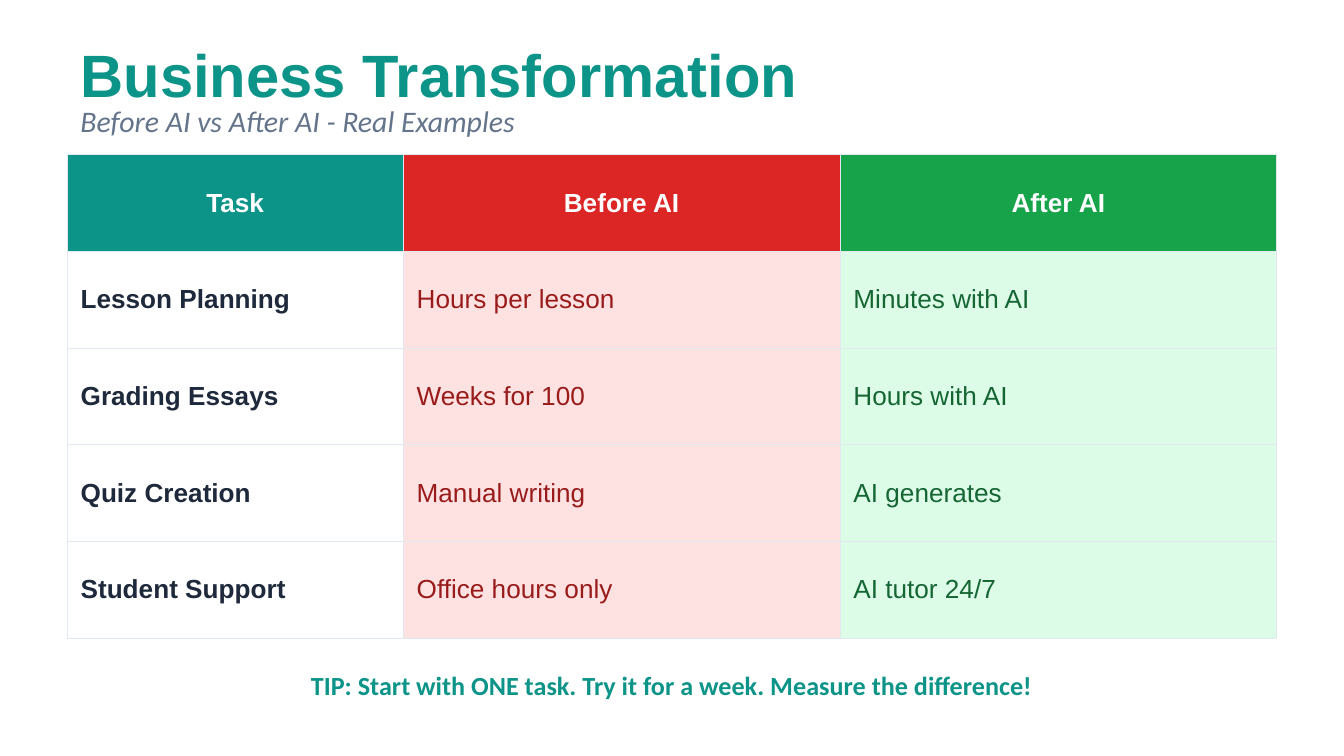
from lxml import etree
from pptx import Presentation
from pptx.dml.color import RGBColor
from pptx.enum import text
from pptx.oxml import ns
from pptx.util import Pt

COLORS = {
    "teal": "0D9488", "slate": "64748B", "ink": "1E293B", "white": "FFFFFF",
    "red": "DC2626", "dark_red": "991B1B", "pale_red": "FEE2E2",
    "green": "16A34A", "dark_green": "166534", "pale_green": "DCFCE7",
    "border": "E2E8F0",
}

HEADING = "Business Transformation"
SUBTITLE = "Before AI vs After AI - Real Examples"
TIP = "TIP: Start with ONE task. Try it for a week. Measure the difference!"
TASKS = [
    ("Task", "Before AI", "After AI"),
    ("Lesson Planning", "Hours per lesson", "Minutes with AI"),
    ("Grading Essays", "Weeks for 100", "Hours with AI"),
    ("Quiz Creation", "Manual writing", "AI generates"),
    ("Student Support", "Office hours only", "AI tutor 24/7"),
]
COLUMNS = [
    {"width": 180, "head": "teal", "body": None, "ink": "ink", "bold": True},
    {"width": 234, "head": "red", "body": "pale_red", "ink": "dark_red", "bold": False},
    {"width": 234, "head": "green", "body": "pale_green", "ink": "dark_green", "bold": False},
]

LEFT, WIDTH = 36, 648
TABLE_TOP, ROW_HEIGHT = 82.8, 51.84
BORDER_WIDTH = 0.5
LEFT_ALIGN, CENTER = text.PP_ALIGN.LEFT, text.PP_ALIGN.CENTER


def rgb(name):
    return RGBColor.from_string(COLORS[name])


def write(frame, words, color, align=LEFT_ALIGN, **font_format):
    frame.text = words
    paragraph = frame.paragraphs[0]
    paragraph.alignment = align
    font = paragraph.runs[0].font
    font.color.rgb = rgb(color)
    for key, value in font_format.items():
        setattr(font, key, value)


def place(box, top, height, words, color, **font_format):
    frame = box.text_frame
    layout = {"left": Pt(LEFT), "top": Pt(top), "width": Pt(WIDTH), "height": Pt(height)}
    for key, value in layout.items():
        setattr(box, key, value)
    frame_format = {"word_wrap": True, "auto_size": text.MSO_AUTO_SIZE.NONE,
                    "vertical_anchor": text.MSO_ANCHOR.MIDDLE}
    for key, value in frame_format.items():
        setattr(frame, key, value)
    write(frame, words, color, **font_format)


def add_borders(cell):
    properties = cell._tc.get_or_add_tcPr()
    for index, side in enumerate(("lnL", "lnR", "lnT", "lnB")):
        line = etree.Element(ns.qn(f"a:{side}"), w=str(int(Pt(BORDER_WIDTH))))
        fill = etree.SubElement(line, ns.qn("a:solidFill"))
        etree.SubElement(fill, ns.qn("a:srgbClr"), val=COLORS["border"])
        properties.insert(index, line)


def add_tasks(slide):
    table = slide.shapes.add_table(
        len(TASKS), len(COLUMNS), Pt(LEFT), Pt(TABLE_TOP),
        Pt(WIDTH), Pt(ROW_HEIGHT * len(TASKS))).table
    table.horz_banding = False
    for column, style in zip(table.columns, COLUMNS):
        column.width = Pt(style["width"])
    for r, task in enumerate(TASKS):
        table.rows[r].height = Pt(ROW_HEIGHT)
        is_head = r == 0
        for c, (words, style) in enumerate(zip(task, COLUMNS)):
            cell = table.cell(r, c)
            cell.vertical_anchor = text.MSO_ANCHOR.MIDDLE
            background = style["head" if is_head else "body"]
            if background:
                cell.fill.solid()
                cell.fill.fore_color.rgb = rgb(background)
            else:
                cell.fill.background()
            add_borders(cell)
            write(cell.text_frame, words, "white" if is_head else style["ink"],
                  CENTER if is_head else LEFT_ALIGN,
                  name="Arial", size=Pt(14), bold=is_head or style["bold"])


def main():
    deck = Presentation()
    deck.slide_width, deck.slide_height = Pt(720), Pt(405)
    slide = deck.slides.add_slide(deck.slide_layouts[5])
    slide.background.fill.solid()
    slide.background.fill.fore_color.rgb = rgb("white")

    place(slide.shapes.title, 21.6, 36, HEADING, "teal",
          name="Arial", size=Pt(32), bold=True)
    subtitle = slide.shapes.add_textbox(0, 0, 0, 0)
    place(subtitle, 54, 21.6, SUBTITLE, "slate",
          name="Calibri", size=Pt(16), italic=True)
    add_tasks(slide)
    tip = slide.shapes.add_textbox(0, 0, 0, 0)
    place(tip, 352.8, 28.8, TIP, "teal", align=CENTER,
          name="Calibri", size=Pt(14), bold=True)
    deck.save("out.pptx")


if __name__ == "__main__":
    main()
